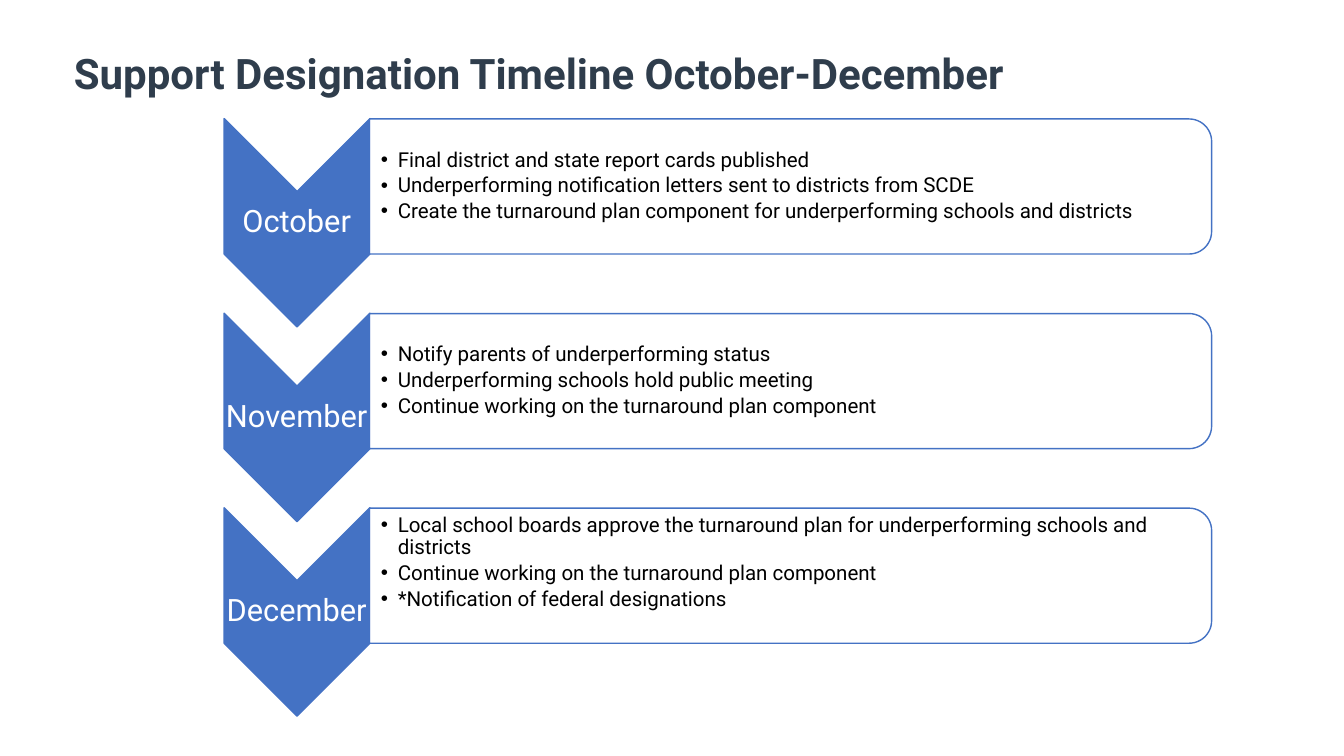
from lxml import etree
from pptx import Presentation
from pptx.dml.color import RGBColor
from pptx.enum.shapes import MSO_SHAPE
from pptx.enum.text import MSO_ANCHOR, PP_ALIGN
from pptx.oxml.ns import qn
from pptx.util import Pt

CHEVRON = MSO_SHAPE.CHEVRON
ROUND = MSO_SHAPE.ROUND_2_SAME_RECTANGLE
TOP, MIDDLE = MSO_ANCHOR.TOP, MSO_ANCHOR.MIDDLE
LEFT, CENTER = PP_ALIGN.LEFT, PP_ALIGN.CENTER
BLUE, WHITE, BLACK, NAVY = "4472C4", "FFFFFF", "000000", "2F3D4C"


def paint(part, color):
    part.rgb = RGBColor.from_string(color)


def write(shape, lines, frame, para, font, color):
    text = shape.text_frame
    for key, value in frame.items():
        setattr(text, key, value)
    text.text = "\n".join(lines)
    for item in text.paragraphs:
        for key, value in para.items():
            setattr(item, key, value)
        for key, value in font.items():
            setattr(item.runs[0].font, key, value)
        paint(item.runs[0].font.color, color)


deck = Presentation()
deck.slide_width, deck.slide_height = Pt(1440), Pt(810)
slide = deck.slides.add_slide(deck.slide_layouts[5])
shapes = slide.shapes

title = shapes.title
place = {"left": 72, "top": 43.2, "width": 1295.3, "height": 86.4}
for key, value in place.items():
    setattr(title, key, Pt(value))
write(title, ["Support Designation Timeline October-December"],
      {"vertical_anchor": TOP, "word_wrap": True, "margin_top": Pt(8)},
      {"alignment": LEFT},
      {"name": "Roboto", "size": Pt(45), "bold": True}, NAVY)

tight = {"vertical_anchor": MIDDLE, "word_wrap": True}
for side in ("left", "top", "right", "bottom"):
    tight["margin_" + side] = Pt(1.4)

label = {"alignment": CENTER, "line_spacing": 0.9}
point = {"alignment": LEFT, "line_spacing": 0.9, "space_after": Pt(3.9), "level": 1}

months = [
    ("October", 1.4, [
        "Final district and state report cards published",
        "Underperforming notification letters sent to districts from SCDE",
        "Create the turnaround plan component for underperforming schools and districts",
    ]),
    ("November", 1.4, [
        "Notify parents of underperforming status",
        "Underperforming schools hold public meeting",
        "Continue working on the turnaround plan component",
    ]),
    ("December", 28, [
        "Local school boards approve the turnaround plan for underperforming schools and districts",
        "Continue working on the turnaround plan component",
        "*Notification of federal designations",
    ]),
]

step = 208.5
for row, (month, foot, tasks) in enumerate(months):
    drop = row * step
    arrow = shapes.add_shape(CHEVRON, Pt(206.6), Pt(160.6 + drop), Pt(223.2), Pt(156.2))
    name = shapes.add_textbox(Pt(239.8), Pt(205.2 + drop), Pt(156.2), Pt(67))
    panel = shapes.add_shape(ROUND, Pt(774.7), Pt(drop - 251.3), Pt(144.7), Pt(902.2))
    notes = shapes.add_textbox(Pt(396), Pt(134 + drop), Pt(895), Pt(131))

    for shape, color in ((arrow, BLUE), (panel, WHITE)):
        shape.rotation = 90
        shape.shadow.inherit = False
        shape.fill.solid()
        paint(shape.fill.fore_color, color)
        paint(shape.line.color, BLUE)
        shape.line.width = Pt(1.5)
    tint = panel.fill._xPr.find(qn("a:solidFill"))[0]
    etree.SubElement(tint, qn("a:alpha"), val="90000")

    write(name, [month], tight, label, {"name": "Roboto", "size": Pt(33)}, WHITE)
    frame = {**tight, "margin_left": Pt(12.2), "margin_bottom": Pt(foot)}
    write(notes, tasks, frame, point, {"name": "Roboto", "size": Pt(22)}, BLACK)
    for item in notes.text_frame.paragraphs:
        props = item._p.get_or_add_pPr()
        props.set("marL", str(Pt(18)))
        props.set("indent", str(-Pt(18)))
        etree.SubElement(props, qn("a:buFont"), typeface="Arial")
        etree.SubElement(props, qn("a:buChar"), char="•")

deck.save("out.pptx")
